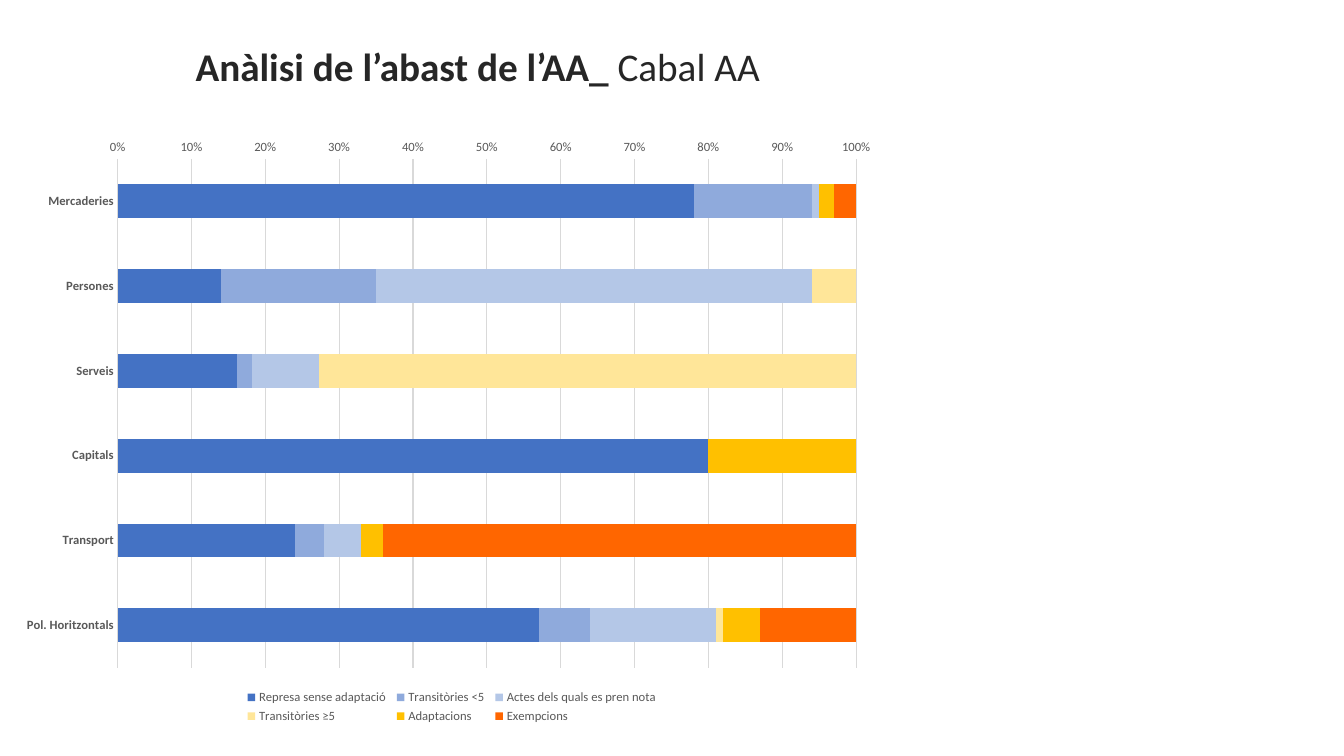
"""Builds the slide on the scope of the AA, with a 100% stacked bar chart by area."""
from dataclasses import dataclass

from pptx import Presentation
from pptx.chart.data import CategoryChartData
from pptx.dml.color import RGBColor
from pptx.enum import chart as ch, text as tx
from pptx.oxml import parse_xml
from pptx.oxml.ns import nsdecls
from pptx.util import Inches, Pt

HEADING = [("Anàlisi de l’abast de l’AA_ ", True), ("Cabal AA", False)]
AREAS = ["Mercaderies", "Persones", "Serveis", "Capitals", "Transport", "Pol. Horitzontals"]
MEASURES = [
    ("Represa sense adaptació", (78, 14, 16, 80, 24, 57), "4472C4"),
    ("Transitòries <5", (16, 21, 2, 0, 4, 7), "8FAADC"),
    ("Actes dels quals es pren nota", (1, 59, 9, 0, 5, 17), "B4C7E7"),
    ("Transitòries ≥5", (0, 6, 72, 0, 0, 1), "FFE699"),
    ("Adaptacions", (2, 0, 0, 20, 3, 5), "FFC000"),
    ("Exempcions", (3, 0, 0, 0, 64, 13), "FF6600"),
]
HEADING_BOX = (1.84, 0.38, 11.41, 0.55)
CHART_BOX = (0.12, 1.28, 8.72, 5.94)
PLOT_SHARE = (0.12, 0.05, 0.84, 0.85)
LEGEND_SHARE = (0.26, 0.93, 0.48, 0.07)


@dataclass(frozen=True)
class Theme:
    font: str = "Calibri"
    heading: str = "262626"
    label: str = "595959"
    grid: str = "D9D9D9"
    paper: str = "FFFFFF"
    heading_size: float = 28
    label_size: float = 9


THEME = Theme()


def rgb(code):
    return RGBColor.from_string(code)


def style(font, size, color, bold=False):
    font.name, font.size, font.bold = THEME.font, Pt(size), bold
    font.color.rgb = rgb(color)


def layout_xml(share, target=""):
    places = "".join(f'<c:{side}Mode val="edge"/>' for side in "xy")
    sizes = "".join(f'<c:{key} val="{part}"/>' for key, part in zip("xywh", share))
    return parse_xml(f'<c:layout {nsdecls("c")}><c:manualLayout>{target}{places}{sizes}'
                     "</c:manualLayout></c:layout>")


def place(parent, layout, index):
    for old in parent.xpath("c:layout"):
        parent.remove(old)
    parent.insert(index, layout)


def add_heading(slide):
    heading = slide.shapes.title
    heading.left, heading.top, heading.width, heading.height = map(Inches, HEADING_BOX)
    heading.fill.solid()
    heading.fill.fore_color.rgb = rgb(THEME.paper)
    heading.line.color.rgb = rgb(THEME.paper)
    heading.line.width = Pt(1)
    frame = heading.text_frame
    frame.word_wrap = True
    frame.auto_size = tx.MSO_AUTO_SIZE.NONE
    frame.vertical_anchor = tx.MSO_ANCHOR.MIDDLE
    paragraph = frame.paragraphs[0]
    paragraph.alignment = tx.PP_ALIGN.LEFT
    paragraph.line_spacing = 1.0
    for words, bold in HEADING:
        run = paragraph.add_run()
        run.text = words
        style(run.font, THEME.heading_size, THEME.heading, bold)


def add_scope_chart(slide):
    scope = CategoryChartData()
    scope.categories = AREAS
    for name, shares, _ in MEASURES:
        scope.add_series(name, shares)
    chart = slide.shapes.add_chart(
        ch.XL_CHART_TYPE.BAR_STACKED_100, *map(Inches, CHART_BOX), scope).chart
    chart.has_title = False
    style(chart.font, THEME.label_size, THEME.label)

    plot = chart.plots[0]
    plot.gap_width, plot.overlap, plot.vary_by_categories = 150, 100, False
    for series, (_, _, color) in zip(plot.series, MEASURES):
        series.format.fill.solid()
        series.format.fill.fore_color.rgb = rgb(color)

    areas, percent = chart.category_axis, chart.value_axis
    for axis in (areas, percent):
        axis.major_tick_mark = axis.minor_tick_mark = ch.XL_TICK_MARK.NONE
        style(axis.tick_labels.font, THEME.label_size, THEME.label, axis is areas)
    areas.reverse_order = True
    percent.has_major_gridlines = True
    for line in (areas.format.line, percent.major_gridlines.format.line):
        line.color.rgb = rgb(THEME.grid)
        line.width = Pt(0.75)
    percent.format.line.fill.background()
    percent.tick_labels.number_format = "0%"
    percent.tick_labels.number_format_is_linked = False

    chart.has_legend = True
    chart.legend.position = ch.XL_LEGEND_POSITION.BOTTOM
    chart.legend.include_in_layout = False
    style(chart.legend.font, THEME.label_size, THEME.label)
    place(chart.element.xpath("c:chart/c:plotArea")[0],
          layout_xml(PLOT_SHARE, '<c:layoutTarget val="inner"/>'), 0)
    place(chart.element.xpath("c:chart/c:legend")[0], layout_xml(LEGEND_SHARE), 1)


def main():
    deck = Presentation()
    deck.slide_width, deck.slide_height = Inches(13.33), Inches(7.5)
    slide = deck.slides.add_slide(deck.slide_layouts[5])
    add_heading(slide)
    add_scope_chart(slide)
    deck.save("out.pptx")


if __name__ == "__main__":
    main()
